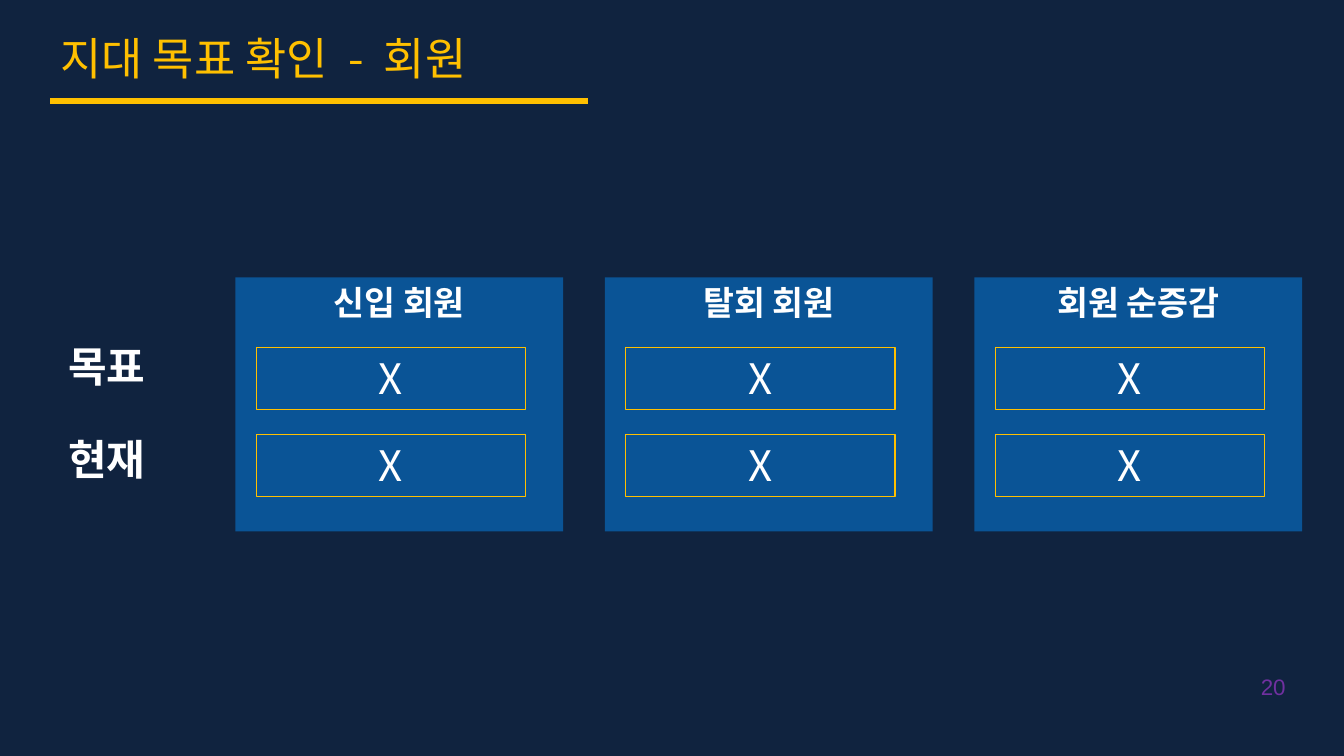
from dataclasses import dataclass

from lxml import etree
from pptx import Presentation
from pptx import util as u
from pptx.dml.color import RGBColor
from pptx.enum import shapes, text
from pptx.oxml.ns import qn

COLORS = {
    "background": "10233F",
    "card": "0A5496",
    "accent": "FFC000",
    "text": "FFFFFF",
    "number": "7030A0",
}
KOREAN_FONT = "Noto Sans CJK KR"
CARD_TOP, CARD_WIDTH, CARD_HEIGHT = 6.99, 8.26, 6.4
CARD_LEFT, CARD_STEP = 5.93, 9.31
BOX_INDENT, BOX_WIDTH, BOX_HEIGHT = 0.53, 6.78, 1.55


@dataclass(frozen=True)
class Row:
    label: str
    label_top: float
    box_top: float
    value: str = "X"


@dataclass(frozen=True)
class Card:
    title: str
    left: float


ROWS = [Row("목표", 8.46, 8.76), Row("현재", 10.8, 10.96)]
CARDS = [
    Card(title, CARD_LEFT + index * CARD_STEP)
    for index, title in enumerate(["신입 회원", "탈회 회원", "회원 순증감"])
]


def color(name: str) -> RGBColor:
    return RGBColor.from_string(COLORS[name])


def write(shape, *pieces: str, size: float, bold: bool = False, fill: str = "text",
          font: str = KOREAN_FONT, align=text.PP_ALIGN.LEFT,
          anchor=text.MSO_ANCHOR.TOP, spacing: tuple[int, ...] = ()) -> None:
    """Write one paragraph; spacing holds letter spacing per piece, in 1/100 pt."""
    frame = shape.text_frame
    frame.word_wrap = True
    frame.vertical_anchor = anchor
    paragraph = frame.paragraphs[0]
    paragraph.alignment = align
    for index, piece in enumerate(pieces):
        run = paragraph.add_run()
        run.text = piece
        run.font.size = u.Pt(size)
        run.font.bold = bold
        run.font.name = font
        run.font.color.rgb = color(fill)
        properties = run._r.get_or_add_rPr()
        etree.SubElement(properties, qn("a:ea")).set("typeface", font)
        if spacing:
            properties.set("spc", str(spacing[index]))


def add_text(slide, left: float, top: float, width: float, height: float,
             *pieces: str, **style):
    box = slide.shapes.add_textbox(u.Cm(left), u.Cm(top), u.Cm(width), u.Cm(height))
    write(box, *pieces, **style)
    return box


def add_rectangle(shape_tree, left: float, top: float, width: float, height: float,
                  label: str, fill: str | None = None, line: str | None = None,
                  **style) -> None:
    shape = shape_tree.add_shape(shapes.MSO_SHAPE.RECTANGLE, u.Cm(left), u.Cm(top),
                                 u.Cm(width), u.Cm(height))
    shape.shadow.inherit = False
    if fill:
        shape.fill.solid()
        shape.fill.fore_color.rgb = color(fill)
    else:
        shape.fill.background()
    if line:
        shape.line.color.rgb = color(line)
        shape.line.width = u.Pt(0.75)
    else:
        shape.line.fill.background()
    write(shape, label, align=text.PP_ALIGN.CENTER, **style)


def add_card(slide, card: Card) -> None:
    group = slide.shapes.add_group_shape()
    add_rectangle(group.shapes, card.left, CARD_TOP, CARD_WIDTH, CARD_HEIGHT,
                  card.title, fill="card", size=24, bold=True)
    for row in ROWS:
        add_rectangle(group.shapes, card.left + BOX_INDENT, row.box_top, BOX_WIDTH,
                      BOX_HEIGHT, row.value, line="accent", size=30)


def add_title(slide) -> None:
    add_text(slide, 1.27, 0.64, 19.48, 1.63, "지대 목표 확인", " -", " 회원",
             size=32, fill="accent", spacing=(0, 720, 0))
    rule = slide.shapes.add_connector(shapes.MSO_CONNECTOR.STRAIGHT, u.Cm(1.27),
                                      u.Cm(2.54), u.Cm(14.82), u.Cm(2.54))
    rule.line.color.rgb = color("accent")
    rule.line.width = u.Pt(4.5)
    etree.SubElement(rule._element.spPr, qn("a:effectLst"))


def add_slide_number(slide) -> None:
    box = add_text(slide, 30.84, 16.84, 1.55, 0.94, "20", size=16, fill="number",
                   font="Arial", align=text.PP_ALIGN.RIGHT,
                   anchor=text.MSO_ANCHOR.MIDDLE)
    box.text_frame.margin_left = box.text_frame.margin_right = 0


def main() -> None:
    presentation = Presentation()
    presentation.slide_width = u.Cm(33.86)
    presentation.slide_height = u.Cm(19.05)
    slide = presentation.slides.add_slide(presentation.slide_layouts[6])
    slide.background.fill.solid()
    slide.background.fill.fore_color.rgb = color("background")
    add_slide_number(slide)
    add_title(slide)
    for row in ROWS:
        add_text(slide, 1.47, row.label_top, 4.45, 1.55, row.label, size=30, bold=True)
    for card in CARDS:
        add_card(slide, card)
    presentation.save("out.pptx")


if __name__ == "__main__":
    main()
